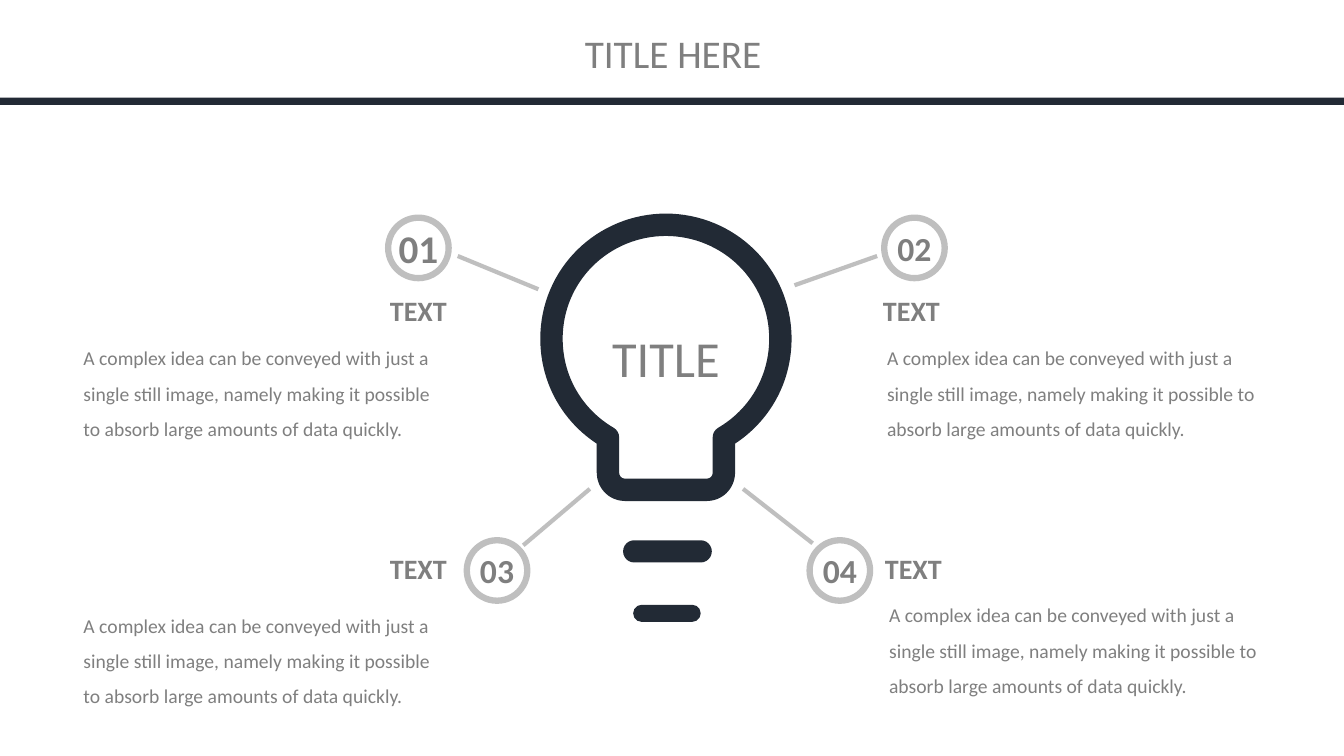
"""Build a light bulb slide with four numbered ideas around it."""
from dataclasses import dataclass

from pptx import Presentation
from pptx.dml.color import RGBColor
from pptx.enum import shapes, text
from pptx.oxml import ns, xmlchemy
from pptx.util import Inches, Pt

Point = tuple[float, float]
Box = tuple[float, float, float, float]

FONT = "Calibri"
NAVY, GRAY, SILVER, WHITE = "222A35", "7F7F7F", "BFBFBF", "FFFFFF"
IDEA_TEXT = (
    "A complex idea can be conveyed with just a single still image, "
    "namely making it possible to absorb large amounts of data quickly."
)
CIRCLE_SIZE = 0.6
BULB_EDGE_SUM = 13.21
BULB_RIGHT_HALF: list[list[Point]] = [
    [(6.6, 2.23), (7.23, 2.23), (7.74, 2.73), (7.74, 3.36)],
    [(7.74, 3.36), (7.74, 3.78), (7.52, 4.14), (7.18, 4.34)],
    [(7.18, 4.34), (7.18, 4.69)],
    [(7.18, 4.69), (7.18, 4.78), (7.11, 4.86), (7.01, 4.86)],
]


@dataclass
class Bar:
    box: Box
    fill: str


@dataclass
class Idea:
    number: str
    number_size: int
    circle: Point
    line_start: Point
    line_end: Point
    heading: Point
    body: Point
    body_width: float


BARS = [
    Bar((6.08, 5.04, 1.06, 0.22), WHITE),
    Bar((6.18, 5.36, 0.88, 0.22), NAVY),
    Bar((6.08, 5.68, 1.06, 0.22), WHITE),
    Bar((6.28, 6, 0.67, 0.17), NAVY),
]
IDEAS = [
    Idea("01", 28, (3.85, 2.16), (4.54, 2.54), (5.34, 2.87), (3.4, 2.93), (0.73, 3.27), 3.8),
    Idea("02", 24, (8.77, 2.16), (8.7, 2.54), (7.88, 2.83), (8.29, 2.93), (8.7, 3.27), 3.94),
    Idea("03", 24, (4.63, 5.36), (5.19, 5.41), (5.85, 4.85), (3.4, 5.49), (0.73, 5.92), 3.8),
    Idea("04", 24, (8.03, 5.36), (8.06, 5.39), (7.37, 4.85), (8.31, 5.49), (8.72, 5.82), 3.94),
]


def color(value: str) -> RGBColor:
    return RGBColor.from_string(value)


def write(shape, content: str, size: int, bold: bool = False,
          align=text.PP_ALIGN.CENTER, spacing: float | None = None) -> None:
    shape.text_frame.text = content
    paragraph = shape.text_frame.paragraphs[0]
    paragraph.alignment = align
    if spacing is not None:
        paragraph.line_spacing = spacing
    font = paragraph.runs[0].font
    font.name, font.size, font.bold = FONT, Pt(size), bold
    font.color.rgb = color(GRAY)


def clear_margins(shape) -> None:
    frame = shape.text_frame
    frame.margin_left = frame.margin_right = frame.margin_top = frame.margin_bottom = 0


def add_text(slide, box: Box):
    shape = slide.shapes.add_textbox(*map(Inches, box))
    shape.text_frame.word_wrap = True
    shape.text_frame.auto_size = text.MSO_AUTO_SIZE.SHAPE_TO_FIT_TEXT
    return shape


def add_filled(slide, kind, box: Box, fill: str):
    shape = slide.shapes.add_shape(kind, *map(Inches, box))
    shape.shadow.inherit = False
    shape.fill.solid()
    shape.fill.fore_color.rgb = color(fill)
    shape.line.fill.background()
    return shape


def set_line(line, value: str, width: float) -> None:
    line.color.rgb = color(value)
    line.width = Pt(width)


def bend_segments(shape, pieces: list[list[Point]]) -> None:
    """Turn each run of three straight segments into one Bezier curve."""
    segments = iter(list(shape._element.iter(ns.qn("a:lnTo"))))
    for piece in pieces:
        group = [next(segments) for _ in piece[1:]]
        if len(group) == 3:
            curve = xmlchemy.OxmlElement("a:cubicBezTo")
            group[0].addprevious(curve)
            for segment in group:
                curve.append(segment[0])
                segment.getparent().remove(segment)


def add_bulb(slide) -> None:
    left_half = [[(BULB_EDGE_SUM - x, y) for x, y in reversed(piece)]
                 for piece in reversed(BULB_RIGHT_HALF)]
    base = [BULB_RIGHT_HALF[-1][-1], left_half[0][0]]
    pieces = [*BULB_RIGHT_HALF, base, *left_half]
    points = [(Inches(x), Inches(y)) for piece in pieces for x, y in piece[1:]]
    start_x, start_y = map(Inches, pieces[0][0])
    builder = slide.shapes.build_freeform(start_x, start_y, scale=1.0)
    builder.add_line_segments(points, close=True)
    bulb = builder.convert_to_shape()
    bend_segments(bulb, pieces)
    bulb.shadow.inherit = False
    bulb.fill.background()
    set_line(bulb.line, NAVY, 16)
    bulb.line._get_or_add_ln().append(xmlchemy.OxmlElement("a:round"))
    bulb.text_frame.vertical_anchor = text.MSO_ANCHOR.MIDDLE
    write(bulb, "TITLE", 36)
    for bar in BARS:
        shape = add_filled(slide, shapes.MSO_SHAPE.ROUNDED_RECTANGLE, bar.box, bar.fill)
        shape.adjustments[0] = 0.5


def add_idea(slide, idea: Idea) -> None:
    circle = add_filled(slide, shapes.MSO_SHAPE.OVAL,
                        (*idea.circle, CIRCLE_SIZE, CIRCLE_SIZE), WHITE)
    set_line(circle.line, SILVER, 4.5)
    clear_margins(circle)
    circle.text_frame.vertical_anchor = text.MSO_ANCHOR.MIDDLE
    write(circle, idea.number, idea.number_size, bold=True)

    connector = slide.shapes.add_connector(
        shapes.MSO_CONNECTOR.STRAIGHT, *map(Inches, idea.line_start + idea.line_end))
    set_line(connector.line, SILVER, 3)
    properties = connector._element.find(ns.qn("p:spPr"))
    properties.append(xmlchemy.OxmlElement("a:effectLst"))

    heading = add_text(slide, (*idea.heading, 1.5, 0.37))
    write(heading, "TEXT", 20, bold=True, spacing=0.8)
    body = add_text(slide, (*idea.body, idea.body_width, 1.16))
    write(body, IDEA_TEXT, 14, align=text.PP_ALIGN.LEFT, spacing=1.5)


def main() -> None:
    presentation = Presentation()
    presentation.slide_width, presentation.slide_height = Inches(13.33), Inches(7.5)
    slide = presentation.slides.add_slide(presentation.slide_layouts[6])

    add_filled(slide, shapes.MSO_SHAPE.RECTANGLE, (0, 0.97, 13.33, 0.07), NAVY)
    title = add_text(slide, (4.85, 0.29, 3.65, 0.47))
    clear_margins(title)
    write(title, "TITLE HERE", 28)
    add_bulb(slide)
    for idea in IDEAS:
        add_idea(slide, idea)
    presentation.save("out.pptx")


if __name__ == "__main__":
    main()
